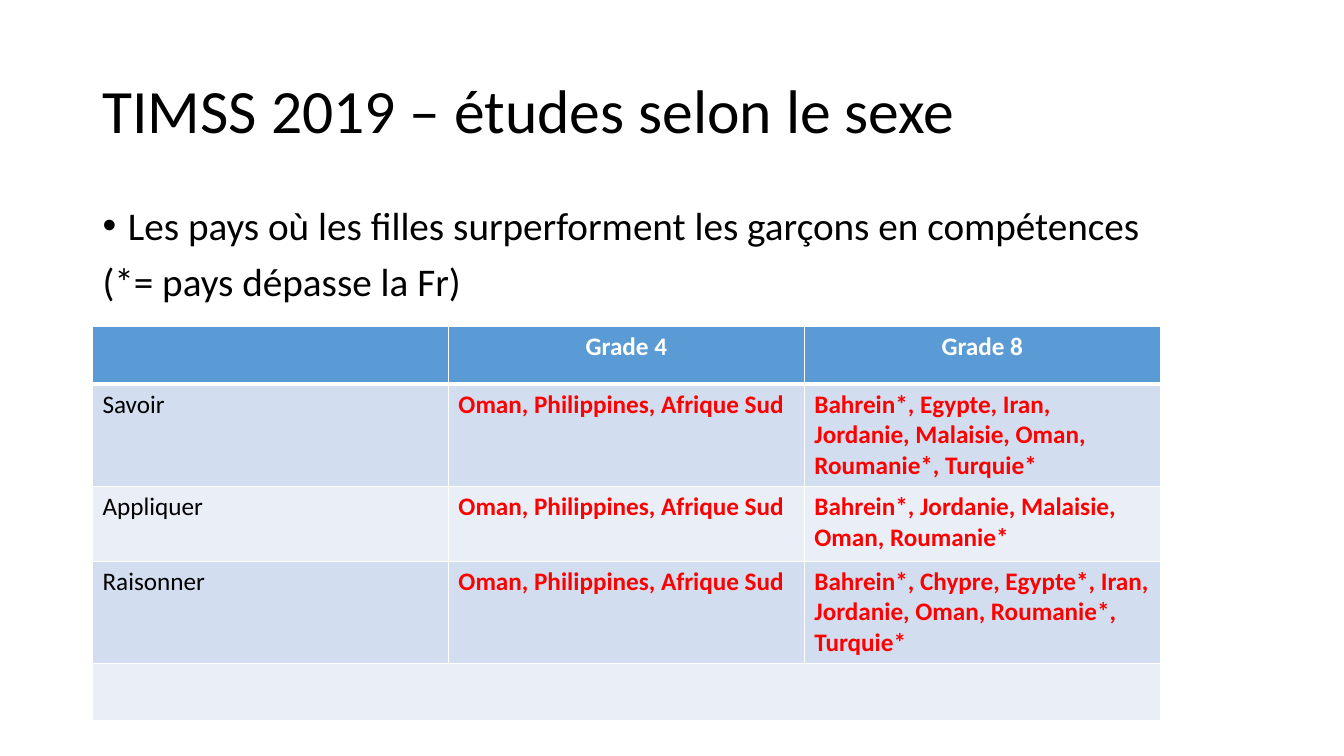
from lxml.etree import SubElement
from pptx import Presentation
from pptx.dml.color import RGBColor
from pptx.enum.text import MSO_ANCHOR, MSO_AUTO_SIZE, PP_ALIGN
from pptx.oxml.ns import qn
from pptx.util import Cm, Pt

TITLE = "TIMSS 2019 – études selon le sexe"
BODY = [
    ("Les pays où les filles surperforment les garçons en compétences", True),
    ("(*= pays dépasse la Fr)", False),
]
GRADE_4 = "Oman, Philippines, Afrique Sud"
ROWS = [
    ("", "Grade 4", "Grade 8"),
    ("Savoir", GRADE_4,
     "Bahrein*, Egypte, Iran, Jordanie, Malaisie, Oman, Roumanie*, Turquie*"),
    ("Appliquer", GRADE_4, "Bahrein*, Jordanie, Malaisie, Oman, Roumanie*"),
    ("Raisonner", GRADE_4,
     "Bahrein*, Chypre, Egypte*, Iran, Jordanie, Oman, Roumanie*, Turquie*"),
    ("", "", ""),
]
COLORS = {"text": "000000", "white": "FFFFFF", "red": "FF0000",
          "head": "5B9BD5", "odd": "D2DEEF", "even": "EAEFF7"}
LEFT, WIDTH = 2.33, 29.21
TITLE_BOX = (LEFT, 1.01, WIDTH, 3.68)
BODY_BOX = (LEFT, 5.08, WIDTH, 12.09)
TABLE_TOP, COL_WIDTH = 8.23, 8.97
HEIGHTS = (1.45, 2.58, 1.88, 2.58, 1.45)
INDENT = 0.64


def rgb(name):
    return RGBColor.from_string(COLORS[name])


def assign(obj, **values):
    for name, value in values.items():
        setattr(obj, name, value)


def style(par, size, color="text", bold=False):
    assign(par.font, name="Calibri", size=Pt(size), bold=bold)
    par.font.color.rgb = rgb(color)


def place(shape, box, anchor):
    for name, value in zip(("left", "top", "width", "height"), box):
        setattr(shape, name, Cm(value))
    assign(shape.text_frame, word_wrap=True, vertical_anchor=anchor,
           auto_size=MSO_AUTO_SIZE.NONE)


def set_bullet(par, shown):
    props = par._p.get_or_add_pPr()
    indent = Cm(INDENT) if shown else 0
    props.set("marL", str(indent))
    props.set("indent", str(-indent))
    if shown:
        SubElement(props, qn("a:buFont"), typeface="Arial")
        SubElement(props, qn("a:buChar"), char="•")
    else:
        SubElement(props, qn("a:buNone"))


def add_borders(cell, head):
    props = cell._tc.get_or_add_tcPr()
    for side in "LRTB":
        width = 3 if head and side == "B" else 1
        line = SubElement(props, qn(f"a:ln{side}"), w=str(Pt(width)))
        fill = SubElement(line, qn("a:solidFill"))
        SubElement(fill, qn("a:srgbClr"), val=COLORS["white"])


def fill_cell(cell, text, row, col):
    head = row == 0
    add_borders(cell, head)
    cell.fill.solid()
    cell.fill.fore_color.rgb = rgb("head" if head else "odd" if row % 2 else "even")
    cell.text = text
    par = cell.text_frame.paragraphs[0]
    par.alignment = PP_ALIGN.CENTER if head else PP_ALIGN.LEFT
    color = "white" if head else "red" if col else "text"
    style(par, 18, color, bold=head or col > 0)


def add_grid(slide):
    count = len(ROWS[0])
    grid = slide.shapes.add_table(
        len(ROWS), count, Cm(LEFT), Cm(TABLE_TOP),
        Cm(COL_WIDTH * count), Cm(sum(HEIGHTS))).table
    for col in grid.columns:
        col.width = Cm(COL_WIDTH)
    for r, (texts, height) in enumerate(zip(ROWS, HEIGHTS)):
        grid.rows[r].height = Cm(height)
        for c, text in enumerate(texts):
            fill_cell(grid.cell(r, c), text, r, c)
    last = len(ROWS) - 1
    grid.cell(last, 0).merge(grid.cell(last, count - 1))


def main():
    deck = Presentation()
    assign(deck, slide_width=Cm(33.87), slide_height=Cm(19.05))
    slide = deck.slides.add_slide(deck.slide_layouts[1])
    title, body = slide.placeholders

    place(title, TITLE_BOX, MSO_ANCHOR.MIDDLE)
    title.text_frame.text = TITLE
    par = title.text_frame.paragraphs[0]
    assign(par, alignment=PP_ALIGN.LEFT, line_spacing=0.9)
    style(par, 44)

    place(body, BODY_BOX, MSO_ANCHOR.TOP)
    body.text_frame.text = "\n".join(text for text, _ in BODY)
    for par, (_, shown) in zip(body.text_frame.paragraphs, BODY):
        assign(par, line_spacing=0.9, space_before=Pt(10))
        set_bullet(par, shown)
        style(par, 28)

    add_grid(slide)
    deck.save("out.pptx")


if __name__ == "__main__":
    main()
